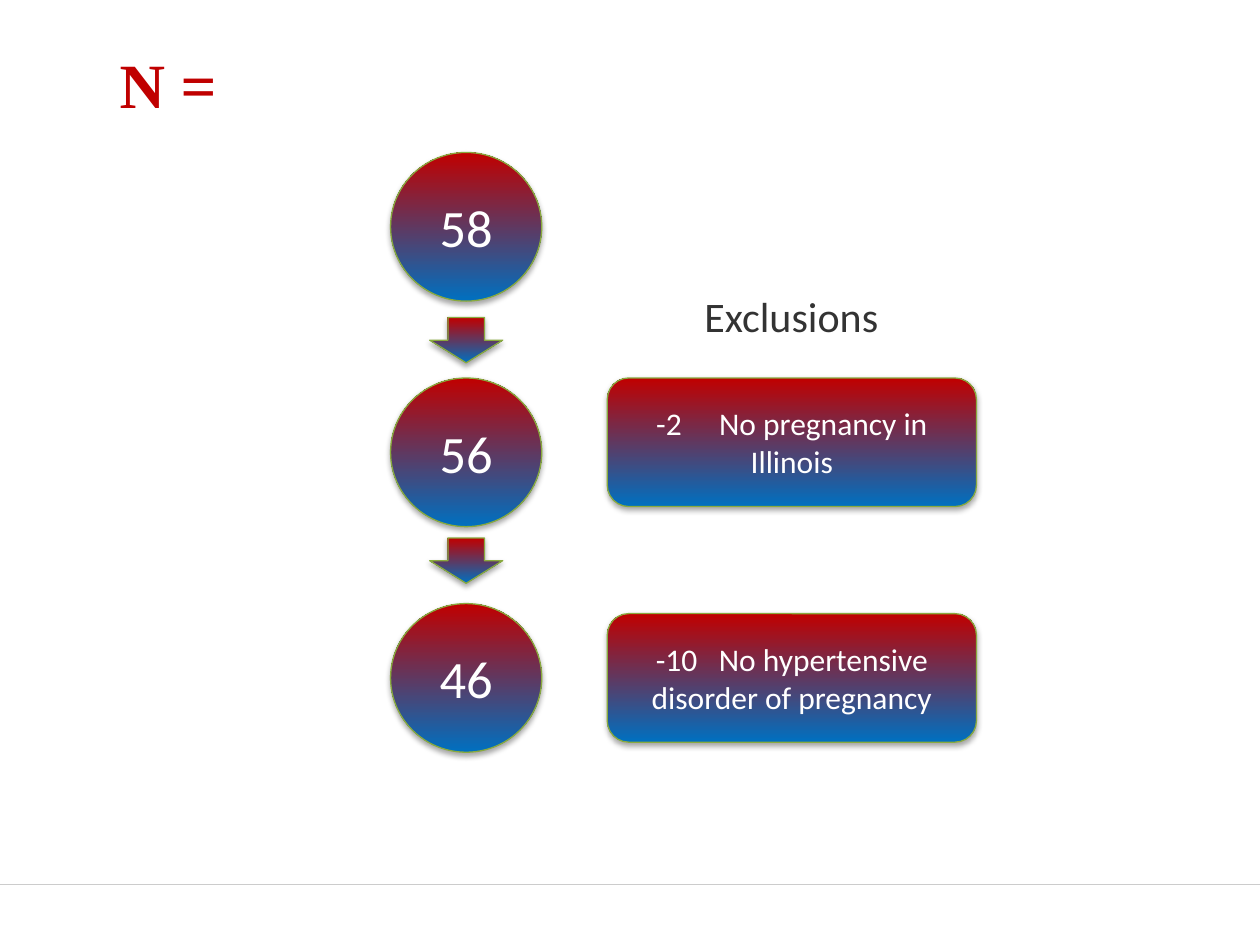
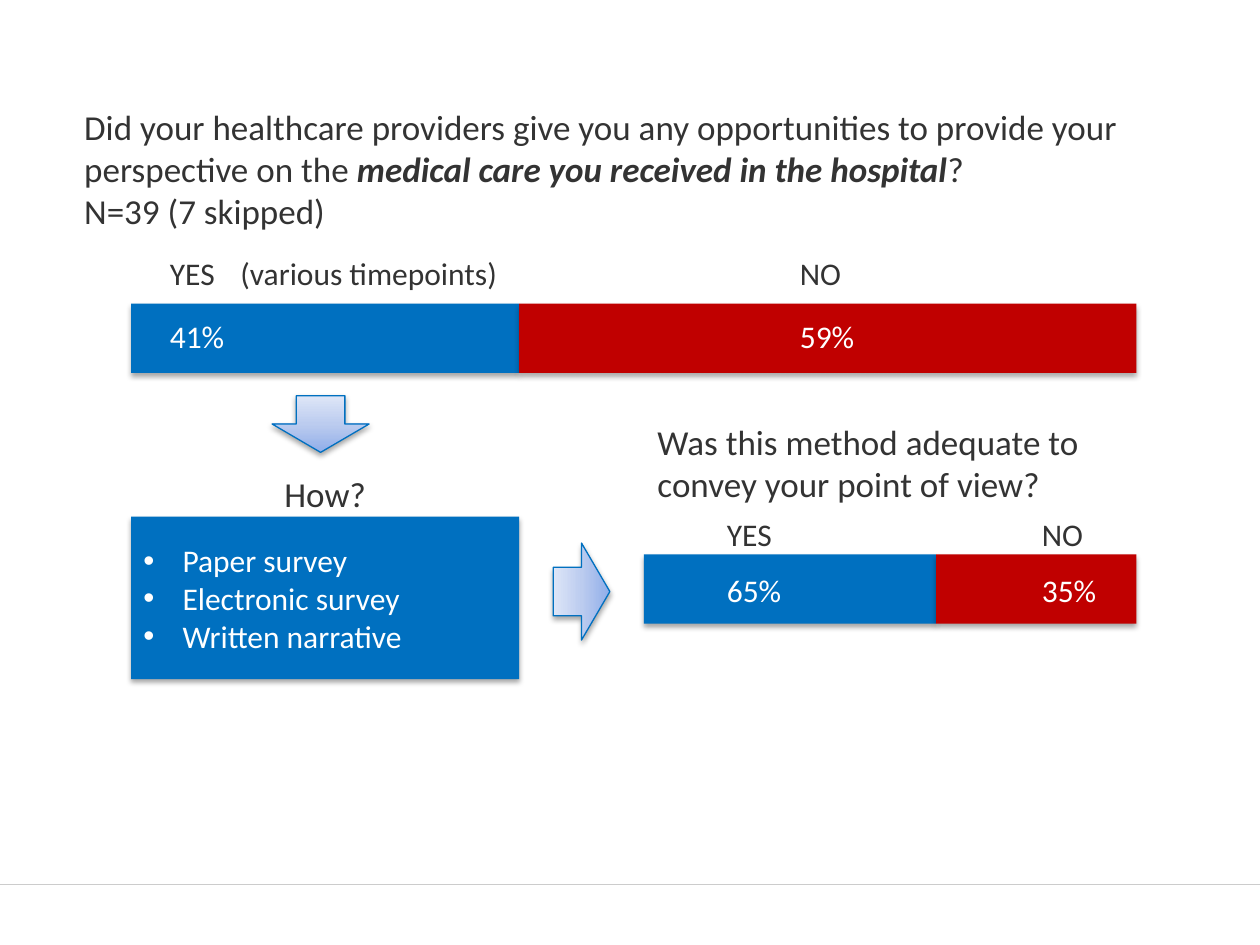
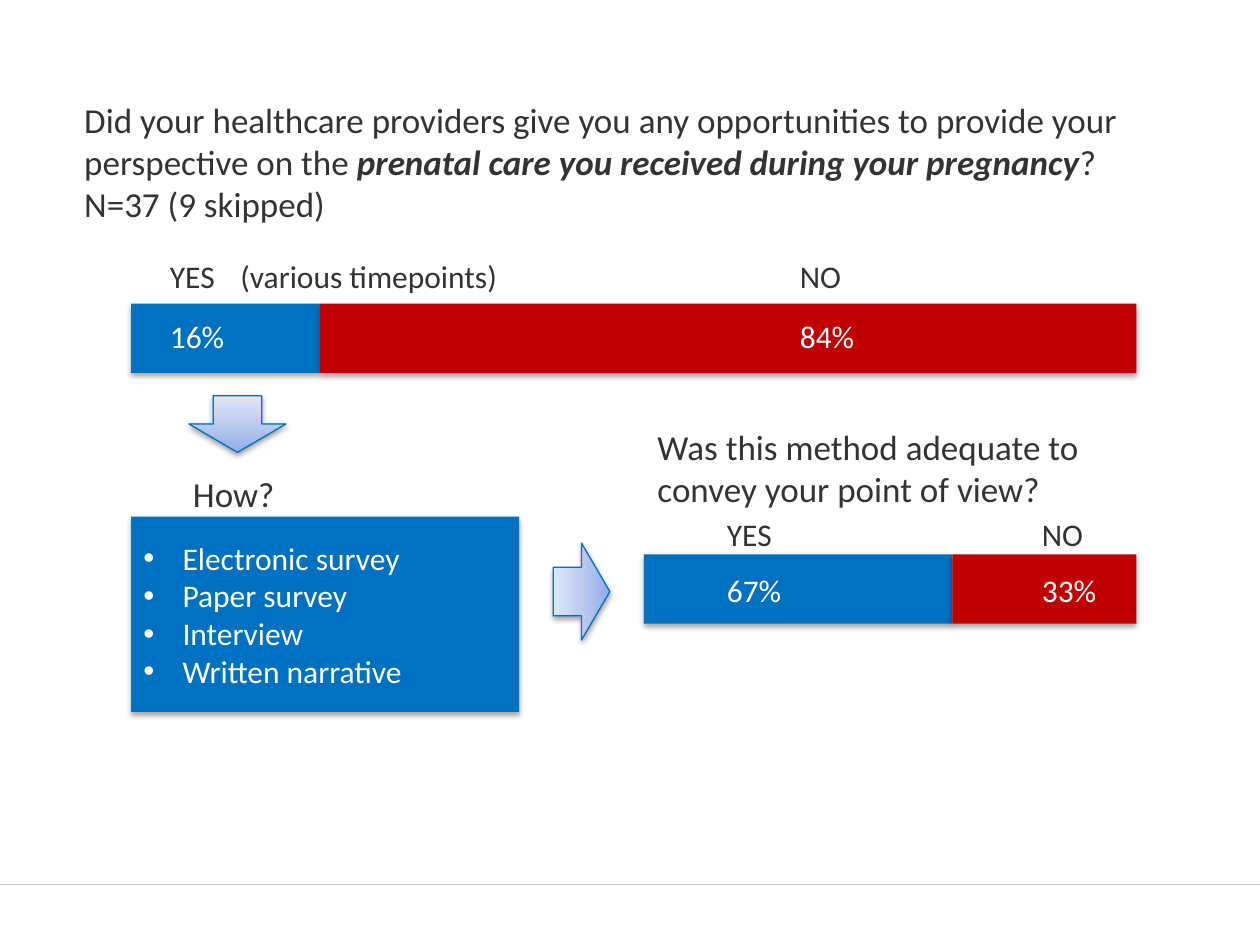
from dataclasses import dataclass
from typing import NamedTuple

from lxml.etree import SubElement
from pptx import Presentation
from pptx.dml.color import RGBColor
from pptx.enum.shapes import MSO_CONNECTOR, MSO_SHAPE
from pptx.enum.text import MSO_ANCHOR, MSO_AUTO_SIZE, PP_ALIGN
from pptx.oxml.ns import qn
from pptx.util import Emu, Pt

EMU_PER_PX = 9144  # 100 px to the inch

BLUE, RED, GREEN = "0070C0", "C00000", "89AA3E"
TEXT, WHITE, RULE = "333333", "FFFFFF", "CCCCCC"
FLOW_GRADIENT = {0: BLUE, 100: RED}
ARROW_GRADIENT = {0: "8FADE9", 50: "BCCCEF", 100: "DEE6F7"}


class Box(NamedTuple):
    left: int
    top: int
    width: int
    height: int


class Style(NamedTuple):
    size: int
    color: str = TEXT
    font: str = "Calibri"
    bold: bool = False
    italic: bool = False


BODY = Style(20)
EMPHASIS = Style(20, bold=True, italic=True)
LABEL = Style(18)
VALUE = Style(18, WHITE)
HEADING = Style(24)
COUNT = Style(30, WHITE)
TITLE = Style(36, RED, "Times New Roman", bold=True)


@dataclass
class SplitBar:
    """A blue YES part and a red NO part, with labels above and values inside."""
    frame: Box
    yes_width: int
    text_left: int
    text_width: int
    label_top: int
    value_top: int
    labels: str
    label_tabs: tuple[int, ...]
    values: str
    value_tabs: tuple[int, ...]


@dataclass
class SurveySlide:
    question_box: Box
    topic: str
    sample: str
    yes_width: int
    values: str
    label_top: int
    arrow_left: int
    how_width: int
    methods: list[str]
    methods_height: int
    adequate_top: int
    adequate_yes_width: int
    adequate_values: str


SURVEYS = [
    SurveySlide(
        Box(57, 79, 876, 111), "medical care you received in the hospital",
        "N=39 (7 skipped)", 308, "41%\t59%", 197, 216, 308,
        ["Paper survey", "Electronic survey", "Written narrative"], 129,
        329, 232, "65%\t35%"),
    SurveySlide(
        Box(57, 73, 901, 111), "prenatal care you received during your pregnancy",
        "N=37 (9 skipped)", 150, "16%\t84%", 199, 150, 163,
        ["Electronic survey", "Paper survey", "Interview", "Written narrative"], 155,
        333, 245, "67%\t33%"),
]
COUNTS = ["58", "56", "46"]
EXCLUSIONS = {
    300: "-2\tNo pregnancy in Illinois",
    487: "-10\tNo hypertensive disorder of pregnancy",
}


def px(length: int) -> Emu:
    return Emu(length * EMU_PER_PX)


def rgb(color: str) -> RGBColor:
    return RGBColor.from_string(color)


def place(box: Box) -> tuple[Emu, ...]:
    return tuple(px(length) for length in box)


def add_run(paragraph, text: str, style: Style) -> None:
    run = paragraph.add_run()
    run.text = text
    font = run.font
    font.name, font.size = style.font, Pt(style.size)
    font.bold, font.italic = style.bold, style.italic
    font.color.rgb = rgb(style.color)


def set_tabs(paragraph, positions: tuple[int, ...]) -> None:
    tab_list = SubElement(paragraph._p.get_or_add_pPr(), qn("a:tabLst"))
    for position in positions:
        SubElement(tab_list, qn("a:tab"), pos=str(px(position)), algn="l")


def set_bullet(paragraph) -> None:
    properties = paragraph._p.get_or_add_pPr()
    properties.set("marL", str(px(31)))
    properties.set("indent", str(px(-31)))
    SubElement(properties, qn("a:buFont"), typeface="Arial")
    SubElement(properties, qn("a:buChar"), char="•")


def add_text(slide, box: Box, text: str = "", style: Style = BODY,
             align=PP_ALIGN.LEFT, tabs: tuple[int, ...] = ()):
    """Draw a text box and return its first paragraph."""
    frame = slide.shapes.add_textbox(*place(box)).text_frame
    frame.word_wrap = True
    frame.auto_size = MSO_AUTO_SIZE.SHAPE_TO_FIT_TEXT
    paragraph = frame.paragraphs[0]
    paragraph.alignment = align
    if tabs:
        set_tabs(paragraph, tabs)
    if text:
        add_run(paragraph, text, style)
    return paragraph


def fill_gradient(shape, stops: dict[int, str]) -> None:
    shape.fill.gradient()
    shape.fill.gradient_angle = 90
    stop_list = shape._element.spPr.find(qn("a:gradFill")).find(qn("a:gsLst"))
    stop_list.clear()
    for percent, color in stops.items():
        stop = SubElement(stop_list, qn("a:gs"), pos=str(percent * 1000))
        SubElement(stop, qn("a:srgbClr"), val=color)


def add_shadow(shape) -> None:
    shape.shadow.inherit = False
    effects = shape._element.spPr.find(qn("a:effectLst"))
    shadow = SubElement(effects, qn("a:outerShdw"), blurRad="40000", dist="23000",
                        dir="5400000", rotWithShape="0")
    color = SubElement(shadow, qn("a:srgbClr"), val="000000")
    SubElement(color, qn("a:alpha"), val="35000")


def add_shape(slide, kind, box: Box, fill: str | dict[int, str], line: str = ""):
    shape = slide.shapes.add_shape(kind, *place(box))
    if isinstance(fill, dict):
        fill_gradient(shape, fill)
    else:
        shape.fill.solid()
        shape.fill.fore_color.rgb = rgb(fill)
    if line:
        shape.line.color.rgb = rgb(line)
        shape.line.width = Pt(0.75)
    else:
        shape.line.fill.background()
    add_shadow(shape)
    shape.text_frame.vertical_anchor = MSO_ANCHOR.MIDDLE
    return shape


def add_flow_shape(slide, kind, box: Box, text: str = "", style: Style = VALUE) -> None:
    shape = add_shape(slide, kind, box, FLOW_GRADIENT, GREEN)
    if text:
        paragraph = shape.text_frame.paragraphs[0]
        paragraph.alignment = PP_ALIGN.CENTER
        if "\t" in text:
            set_tabs(paragraph, (50,))
        add_run(paragraph, text, style)


def add_survey_arrow(slide, left: int, top: int, rotation: int = 0) -> None:
    arrow = add_shape(slide, MSO_SHAPE.DOWN_ARROW, Box(left, top, 77, 45),
                      ARROW_GRADIENT, BLUE)
    arrow.rotation = rotation


def add_split_bar(slide, bar: SplitBar) -> None:
    left, top, width, height = bar.frame
    no_box = Box(left + bar.yes_width, top, width - bar.yes_width, height)
    add_shape(slide, MSO_SHAPE.RECTANGLE, Box(left, top, bar.yes_width, height), BLUE)
    add_shape(slide, MSO_SHAPE.RECTANGLE, no_box, RED)
    add_text(slide, Box(bar.text_left, bar.label_top, bar.text_width, 40),
             bar.labels, LABEL, tabs=bar.label_tabs)
    add_text(slide, Box(bar.text_left, bar.value_top, bar.text_width, 40),
             bar.values, VALUE, tabs=bar.value_tabs)


def add_ruled_slide(presentation):
    """Add a blank slide with the footer rule."""
    slide = presentation.slides.add_slide(presentation.slide_layouts[6])
    rule = slide.shapes.add_connector(MSO_CONNECTOR.STRAIGHT,
                                      px(0), px(702), px(1000), px(702))
    rule.line.color.rgb = rgb(RULE)
    rule.line.width = Pt(1)
    SubElement(rule._element.spPr, qn("a:effectLst"))
    return slide


def build_sample_slide(presentation) -> None:
    slide = add_ruled_slide(presentation)
    add_text(slide, Box(85, 31, 585, 71), "N =", TITLE)
    add_text(slide, Box(522, 226, 212, 50), "Exclusions", HEADING, PP_ALIGN.CENTER)
    for index, count in enumerate(COUNTS):
        add_flow_shape(slide, MSO_SHAPE.OVAL, Box(310, 121 + 179 * index, 120, 118),
                       count, COUNT)
    for top in (252, 427):
        add_flow_shape(slide, MSO_SHAPE.DOWN_ARROW, Box(341, top, 58, 36))
    for top, reason in EXCLUSIONS.items():
        add_flow_shape(slide, MSO_SHAPE.ROUNDED_RECTANGLE, Box(482, top, 293, 102), reason)


def build_survey_slide(presentation, survey: SurveySlide) -> None:
    slide = add_ruled_slide(presentation)
    question = add_text(slide, survey.question_box)
    add_run(question, "Did your healthcare providers give you any opportunities "
                      "to provide your perspective on the ", BODY)
    add_run(question, survey.topic, EMPHASIS)
    add_run(question, "?", BODY)
    question.add_line_break()
    add_run(question, survey.sample, BODY)

    add_split_bar(slide, SplitBar(
        Box(104, 241, 798, 55), survey.yes_width, 125, 734, survey.label_top, 247,
        "YES\t(various timepoints)\tNO", (56, 500), survey.values, (500,)))

    add_survey_arrow(slide, survey.arrow_left, 314)
    add_text(slide, Box(104, 370, survey.how_width, 44), "How?", align=PP_ALIGN.CENTER)
    methods = add_shape(slide, MSO_SHAPE.RECTANGLE,
                        Box(104, 410, 308, survey.methods_height), BLUE)
    frame = methods.text_frame
    for index, method in enumerate(survey.methods):
        paragraph = frame.add_paragraph() if index else frame.paragraphs[0]
        paragraph.alignment = PP_ALIGN.LEFT
        set_bullet(paragraph)
        add_run(paragraph, method, VALUE)

    add_survey_arrow(slide, 423, 447, rotation=270)
    add_text(slide, Box(512, survey.adequate_top, 390, 77),
             "Was this method adequate to convey your point of view?")
    add_split_bar(slide, SplitBar(
        Box(511, 440, 391, 55), survey.adequate_yes_width, 567, 335, 404, 448,
        "YES\tNO", (250,), survey.adequate_values, (250,)))


def main() -> None:
    presentation = Presentation()
    presentation.slide_width, presentation.slide_height = px(1000), px(750)
    build_sample_slide(presentation)
    for survey in SURVEYS:
        build_survey_slide(presentation, survey)
    presentation.save("out.pptx")


if __name__ == "__main__":
    main()
